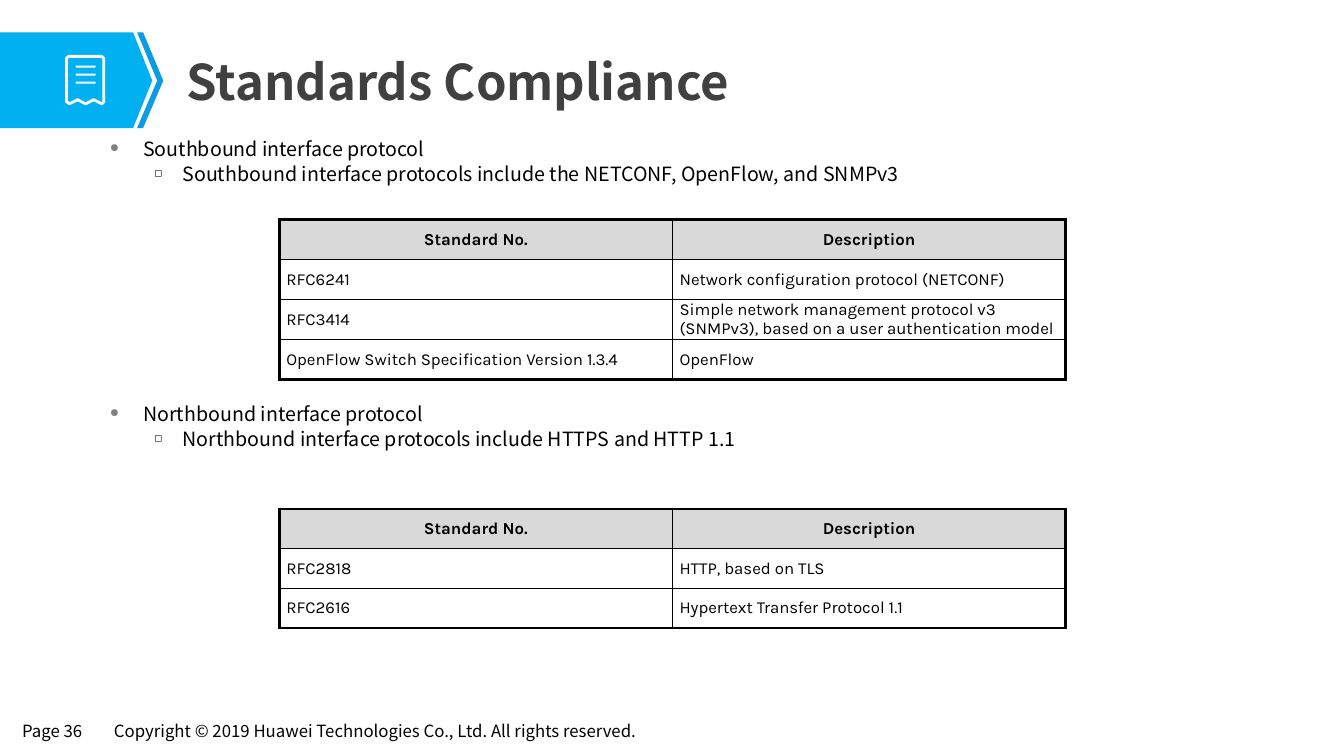
"""Build the Standards Compliance slide with its two protocol tables."""
from dataclasses import dataclass
from typing import Any

from lxml.etree import SubElement
from pptx import Presentation
from pptx.dml.color import RGBColor
from pptx.enum.shapes import MSO_SHAPE
from pptx.enum.text import MSO_ANCHOR, PP_ALIGN
from pptx.oxml.ns import qn
from pptx.util import Emu, Pt

PX = 9144
BLACK = RGBColor(0x00, 0x00, 0x00)
WHITE = RGBColor(0xFF, 0xFF, 0xFF)
TITLE_GREY = RGBColor(0x40, 0x40, 0x40)
BULLET_GREY = RGBColor(0x80, 0x80, 0x80)
HEADER_GREY = RGBColor(0xD9, 0xD9, 0xD9)
SKY = RGBColor(0x00, 0xB0, 0xF0)
BLUE = RGBColor(0x0B, 0x9C, 0xE5)
TEXT_FONT = "Noto Sans CJK SC"
TABLE_FONT = "Karla"
INSETS = {"margin_left": Emu(9 * PX), "margin_right": Emu(9 * PX),
          "margin_top": Emu(4 * PX), "margin_bottom": Emu(4 * PX),
          "word_wrap": True}


@dataclass(frozen=True)
class Level:
    mark: str
    color: RGBColor
    percent: int
    margin: int
    hanging: int
    align: PP_ALIGN


@dataclass(frozen=True)
class Section:
    text_top: int
    lines: tuple[str, str]
    table_top: int
    table_height: int
    rows: list[tuple[str, str]]


@dataclass(frozen=True)
class Outline:
    points: list[tuple[int, int]]
    fill: RGBColor | None


LEVELS = [Level("●", BULLET_GREY, 60, 33, 33, PP_ALIGN.JUSTIFY),
          Level("◻", BLACK, 50, 72, 28, PP_ALIGN.LEFT)]

SECTIONS = [
    Section(132, ("Southbound interface protocol",
                  "Southbound interface protocols include the NETCONF, OpenFlow, and SNMPv3"),
            218, 158,
            [("RFC6241", "Network configuration protocol (NETCONF)"),
             ("RFC3414", "Simple network management protocol v3 (SNMPv3), "
                         "based on a user authentication model"),
             ("OpenFlow Switch Specification Version 1.3.4", "OpenFlow")]),
    Section(395, ("Northbound interface protocol",
                  "Northbound interface protocols include HTTPS and HTTP 1.1"),
            505, 118,
            [("RFC2818", "HTTP, based on TLS"),
             ("RFC2616", "Hypertext Transfer Protocol 1.1")]),
]

OUTLINES = [
    Outline([(0, 32), (132, 32), (151, 80), (132, 127), (0, 127)], SKY),
    Outline([(136, 32), (142, 32), (162, 80), (142, 127), (136, 127), (156, 80)], BLUE),
    Outline([(68, 56), (101, 56), (103, 58), (103, 101), (101, 103), (93, 99),
             (85, 103), (77, 99), (69, 103), (66, 101), (66, 58)], None),
]


def px(*lengths: int) -> list[Emu]:
    """Turn px lengths into EMU."""
    return [Emu(length * PX) for length in lengths]


def apply(target: Any, values: dict[str, Any]) -> None:
    """Set each format value on the target."""
    for name, value in values.items():
        setattr(target, name, value)


def write(para: Any, text: str, name: str, size: int,
          color: RGBColor = BLACK, bold: bool = False) -> None:
    """Add one formatted span to a paragraph."""
    span = para.add_run()
    span.text = text
    apply(span.font, {"name": name, "size": Pt(size), "bold": bold})
    span.font.color.rgb = color


def add_box(page: Any, left: int, top: int, width: int, height: int) -> Any:
    """Add a wrapping text box and return its text frame."""
    frame = page.shapes.add_textbox(*px(left, top, width, height)).text_frame
    apply(frame, INSETS)
    return frame


def draw_outline(page: Any, outline: Outline) -> None:
    """Draw a closed outline, filled or stroked in white."""
    builder = page.shapes.build_freeform(*outline.points[0], scale=PX)
    builder.add_line_segments(outline.points[1:], close=True)
    shape = builder.convert_to_shape()
    shape.shadow.inherit = False
    if outline.fill is None:
        shape.fill.background()
        shape.line.color.rgb = WHITE
        shape.line.width = Pt(2)
    else:
        shape.fill.solid()
        shape.fill.fore_color.rgb = outline.fill
        shape.line.fill.background()


def draw_icon_bar(page: Any, top: int) -> None:
    """Draw one text bar of the document icon."""
    bar = page.shapes.add_shape(MSO_SHAPE.ROUNDED_RECTANGLE, *px(75, top, 20, 2))
    bar.adjustments[0] = 0.5
    bar.shadow.inherit = False
    bar.fill.solid()
    bar.fill.fore_color.rgb = WHITE
    bar.line.fill.background()


def add_bullet(para: Any, level: Level) -> None:
    """Give a paragraph the indent and bullet of its level."""
    properties = para._p.get_or_add_pPr()
    properties.set("marL", str(level.margin * PX))
    properties.set("indent", str(-level.hanging * PX))
    color = SubElement(properties, qn("a:buClr"))
    SubElement(color, qn("a:srgbClr"), val=str(level.color))
    SubElement(properties, qn("a:buSzPct"), val=str(level.percent * 1000))
    SubElement(properties, qn("a:buChar"), char=level.mark)
    para.alignment = level.align


def add_border(cell: Any, side: str, points: float) -> None:
    """Draw one black border of a cell."""
    line = SubElement(cell._tc.get_or_add_tcPr(), qn(f"a:ln{side}"), w=str(Pt(points)))
    fill = SubElement(line, qn("a:solidFill"))
    SubElement(fill, qn("a:srgbClr"), val=str(BLACK))


def draw_table(page: Any, section: Section) -> None:
    """Draw a standards table with a grey header."""
    rows = [("Standard No.", "Description"), *section.rows]
    table = page.shapes.add_table(
        len(rows), 2, *px(277, section.table_top, 780, section.table_height)).table
    table.horz_banding = False
    for i, row in enumerate(rows):
        for j, text in enumerate(row):
            cell = table.cell(i, j)
            edges = {"L": j == 0, "R": j == 1, "T": i == 0, "B": i == len(rows) - 1}
            for side, outer in edges.items():
                add_border(cell, side, 2.25 if outer else 1)
            apply(cell, {"margin_left": Emu(7 * PX), "margin_right": Emu(7 * PX),
                         "margin_top": 0, "margin_bottom": 0,
                         "vertical_anchor": MSO_ANCHOR.MIDDLE})
            cell.fill.solid()
            cell.fill.fore_color.rgb = WHITE if i else HEADER_GREY
            para = cell.text_frame.paragraphs[0]
            para.alignment = PP_ALIGN.LEFT if i else PP_ALIGN.CENTER
            write(para, text, TABLE_FONT, 12, bold=i == 0)


def draw_section(page: Any, section: Section) -> None:
    """Draw the bullets and the table of a section."""
    frame = add_box(page, 100, section.text_top, 1155, 68)
    for i, (line, level) in enumerate(zip(section.lines, LEVELS)):
        para = frame.add_paragraph() if i else frame.paragraphs[0]
        add_bullet(para, level)
        para.space_before = Pt(i)
        write(para, line, TEXT_FONT, 14)
    draw_table(page, section)


def main() -> None:
    """Build and save the deck."""
    deck = Presentation()
    deck.slide_width, deck.slide_height = px(1333, 750)
    page = deck.slides.add_slide(deck.slide_layouts[5])
    for left, width, text in [
        (13, 84, "Page 36"),
        (104, 566, "Copyright © 2019 Huawei Technologies Co., Ltd. All rights reserved."),
    ]:
        write(add_box(page, left, 711, width, 29).paragraphs[0], text, TEXT_FONT, 12)
    for outline in OUTLINES:
        draw_outline(page, outline)
    for top in (65, 73, 81):
        draw_icon_bar(page, top)
    title = page.shapes.title
    apply(title, dict(zip(("left", "top", "width", "height"), px(174, 45, 1075, 70))))
    apply(title.text_frame, {**INSETS, "margin_left": Emu(11 * PX),
                             "vertical_anchor": MSO_ANCHOR.MIDDLE})
    heading = title.text_frame.paragraphs[0]
    heading.alignment = PP_ALIGN.LEFT
    write(heading, "Standards Compliance", TEXT_FONT, 35, TITLE_GREY, True)
    for section in SECTIONS:
        draw_section(page, section)
    deck.save("out.pptx")


if __name__ == "__main__":
    main()
